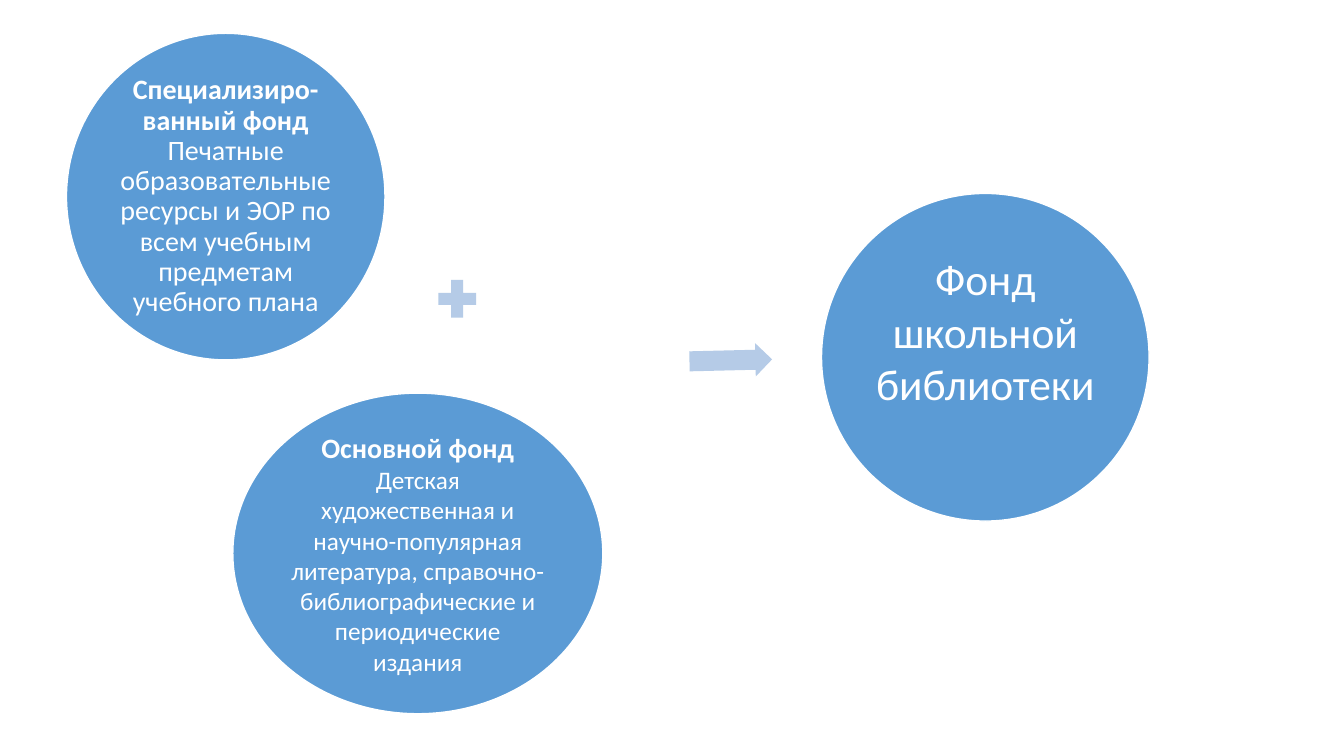
from dataclasses import dataclass

from pptx import Presentation
from pptx.dml.color import RGBColor
from pptx.enum.shapes import MSO_SHAPE
from pptx.enum.text import MSO_ANCHOR, PP_ALIGN
from pptx.shapes.autoshape import Shape
from pptx.slide import Slide
from pptx.util import Pt


@dataclass(frozen=True)
class Theme:
    font: str = "Calibri"
    circle: RGBColor = RGBColor(0x5B, 0x9B, 0xD5)
    sign: RGBColor = RGBColor(0xB5, 0xCB, 0xE7)
    white: RGBColor = RGBColor(0xFF, 0xFF, 0xFF)
    heading_size: float = 20
    body_size: float = 18
    result_size: float = 31
    outline: float = 1


@dataclass(frozen=True)
class Box:
    left: float
    top: float
    width: float
    height: float


@dataclass(frozen=True)
class TextRun:
    text: str
    size: float
    bold: bool = False


@dataclass(frozen=True)
class FundCircle:
    box: Box
    paragraphs: list[list[TextRun]]
    line_spacing: float = 1.0
    inset: float = 2
    bottom_inset: float = 2


@dataclass(frozen=True)
class Sign:
    kind: MSO_SHAPE
    box: Box
    rotation: float = 0


THEME = Theme()

CIRCLES = [
    FundCircle(
        Box(166.3, 280.8, 264.3, 229),
        [
            [TextRun("Основной фонд", THEME.heading_size, True)],
            [TextRun("Детская художественная и научно-популярная литература, "
                     "справочно-библиографические и периодические издания",
                     THEME.body_size)],
        ],
    ),
    FundCircle(
        Box(47.5, 23.8, 227.5, 233.3),
        [[
            TextRun("Специализиро-ванный фонд ", THEME.heading_size, True),
            TextRun("Печатные образовательные ресурсы и ЭОР по всем "
                    "учебным предметам учебного плана", THEME.heading_size),
        ]],
        line_spacing=0.9,
    ),
    # The deep bottom inset lifts the text above the centre
    FundCircle(
        Box(586.8, 138.2, 234, 234),
        [[TextRun("Фонд школьной библиотеки", THEME.result_size)]],
        inset=3,
        bottom_inset=41,
    ),
]

SIGNS = [
    Sign(MSO_SHAPE.MATH_PLUS, Box(308.2, 195.1, 36.7, 36.7)),
    Sign(MSO_SHAPE.RIGHT_ARROW, Box(492.5, 245.5, 59, 23.8), rotation=358.6),
]


def add_filled_shape(slide: Slide, kind: MSO_SHAPE, box: Box, color: RGBColor) -> Shape:
    shape = slide.shapes.add_shape(
        kind, Pt(box.left), Pt(box.top), Pt(box.width), Pt(box.height))
    shape.shadow.inherit = False
    shape.fill.solid()
    shape.fill.fore_color.rgb = color
    return shape


def add_circle(slide: Slide, circle: FundCircle) -> None:
    shape = add_filled_shape(slide, MSO_SHAPE.OVAL, circle.box, THEME.circle)
    shape.line.color.rgb = THEME.white
    shape.line.width = Pt(THEME.outline)

    frame = shape.text_frame
    frame.word_wrap = True
    frame.vertical_anchor = MSO_ANCHOR.MIDDLE
    frame.margin_left = frame.margin_right = frame.margin_top = Pt(circle.inset)
    frame.margin_bottom = Pt(circle.bottom_inset)

    for index, text_runs in enumerate(circle.paragraphs):
        paragraph = frame.add_paragraph() if index else frame.paragraphs[0]
        paragraph.alignment = PP_ALIGN.CENTER
        paragraph.line_spacing = circle.line_spacing
        for text_run in text_runs:
            run = paragraph.add_run()
            run.text = text_run.text
            run.font.name = THEME.font
            run.font.size = Pt(text_run.size)
            run.font.bold = text_run.bold
            run.font.color.rgb = THEME.white


def add_sign(slide: Slide, sign: Sign) -> None:
    shape = add_filled_shape(slide, sign.kind, sign.box, THEME.sign)
    shape.line.fill.background()
    shape.rotation = sign.rotation
    if sign.kind == MSO_SHAPE.RIGHT_ARROW:
        shape.adjustments[0] = 0.6
        shape.adjustments[1] = 0.5


def main() -> None:
    presentation = Presentation()
    presentation.slide_width = Pt(960)
    presentation.slide_height = Pt(540)
    slide = presentation.slides.add_slide(presentation.slide_layouts[6])

    # Two funds and the library fund they form
    for circle in CIRCLES:
        add_circle(slide, circle)

    # Plus and arrow between the circles
    for sign in SIGNS:
        add_sign(slide, sign)

    presentation.save("out.pptx")


if __name__ == "__main__":
    main()
